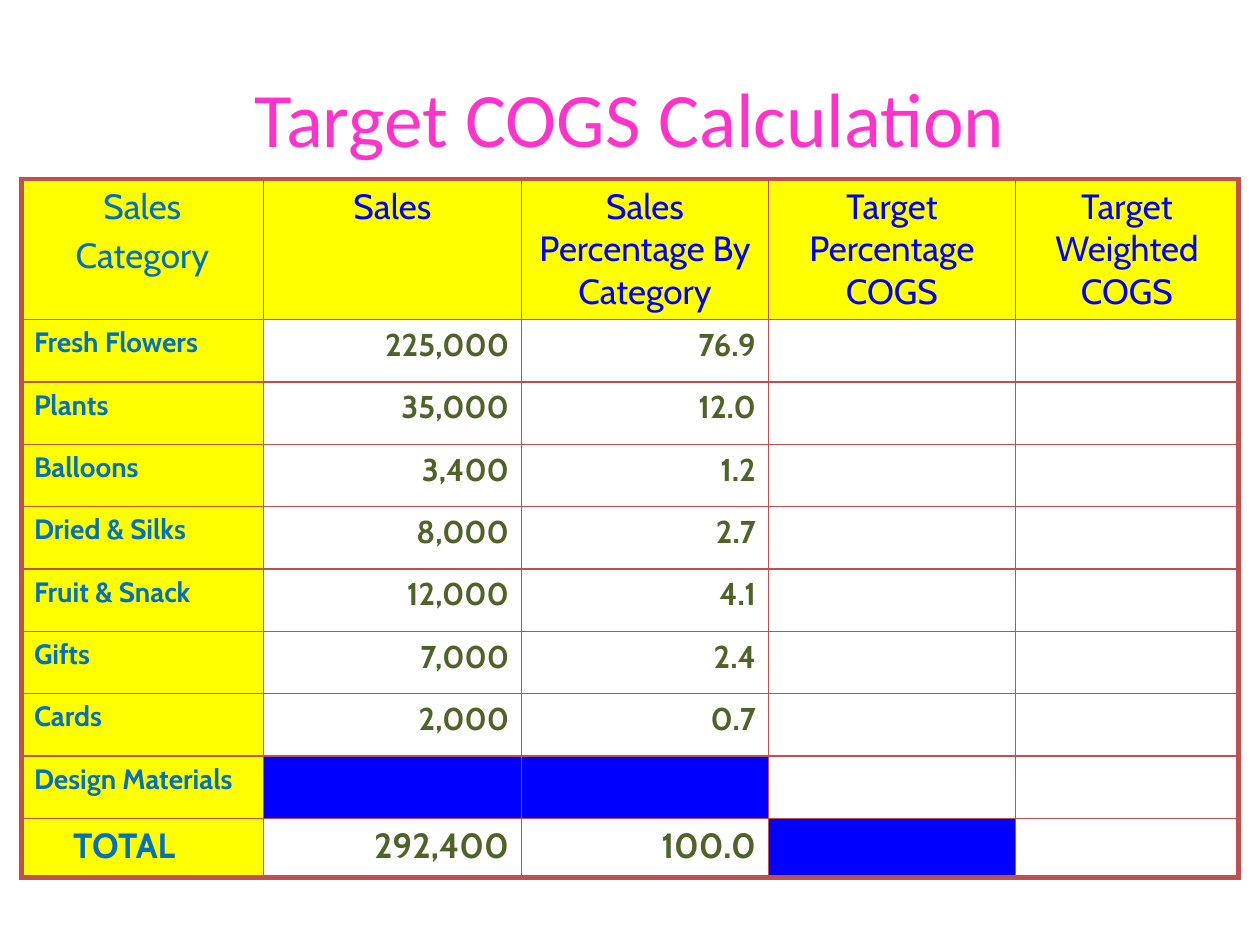
from dataclasses import dataclass

from lxml.etree import SubElement
from pptx import Presentation
from pptx.dml.color import RGBColor
from pptx.enum.dml import MSO_PATTERN
from pptx.enum.text import MSO_ANCHOR, PP_ALIGN
from pptx.oxml.ns import qn
from pptx.util import Inches, Pt

COLORS = {
    "title": "FF33CC",
    "label": "0070C0",
    "heading": "0000FF",
    "number": "4F6228",
    "label_fill": "FFFF00",
    "blocked": "0000FF",
    "border": "C0504D",
}
COLUMN_WIDTHS = [1.92, 2.05, 1.96, 1.96, 1.77]
HEADER_HEIGHT, BODY_HEIGHT, TOTAL_HEIGHT = 1.11, 0.495, 0.47
HEADINGS = [
    "Sales\nCategory",
    "Sales",
    "Sales Percentage By Category",
    "Target Percentage COGS",
    "Target Weighted COGS",
]


@dataclass
class SalesRow:
    category: str
    sales: str = ""
    percentage: str = ""
    blocked: tuple[int, ...] = ()


SALES_ROWS = [
    SalesRow("Fresh Flowers", "225,000", "76.9"),
    SalesRow("Plants", "35,000", "12.0"),
    SalesRow("Balloons", "3,400", "1.2"),
    SalesRow("Dried & Silks", "8,000", "2.7"),
    SalesRow("Fruit & Snack", "12,000", "4.1"),
    SalesRow("Gifts", "7,000", "2.4"),
    SalesRow("Cards", "2,000", "0.7"),
    SalesRow("Design Materials", blocked=(1, 2)),
    SalesRow("TOTAL", "292,400", "100.0", blocked=(3,)),
]


def rgb(name: str) -> RGBColor:
    return RGBColor.from_string(COLORS[name])


def write_text(text_frame, text: str, *, size: float, color: str, font: str = "Cabin",
               bold: bool = False, align=PP_ALIGN.LEFT) -> None:
    for index, line in enumerate(text.split("\n")):
        paragraph = text_frame.paragraphs[0] if index == 0 else text_frame.add_paragraph()
        paragraph.alignment = align
        paragraph.space_before = Pt(size * 0.2 if index else 0)
        run = paragraph.add_run()
        run.text = line
        run.font.name = font
        run.font.size = Pt(size)
        run.font.bold = bold
        run.font.color.rgb = rgb(color)


def fill_cell(cell, color: str) -> None:
    cell.fill.solid()
    cell.fill.fore_color.rgb = rgb(color)


def block_cell(cell) -> None:
    cell.fill.patterned()
    cell.fill.pattern = MSO_PATTERN.WIDE_UPWARD_DIAGONAL
    cell.fill.fore_color.rgb = rgb("blocked")
    cell.fill.back_color.rgb = rgb("blocked")


def set_borders(cell, outer_sides: dict[str, bool]) -> None:
    properties = cell._tc.get_or_add_tcPr()
    for index, (side, is_outer) in enumerate(outer_sides.items()):
        line = properties.makeelement(qn(f"a:{side}"), {"w": str(Pt(3 if is_outer else 1))})
        fill = SubElement(line, qn("a:solidFill"))
        SubElement(fill, qn("a:srgbClr"), val=COLORS["border"])
        properties.insert(index, line)


def add_title(slide) -> None:
    title = slide.shapes.title
    title.left, title.top = Inches(0.5), Inches(0.3)
    title.width, title.height = Inches(9), Inches(1.25)
    title.text_frame.vertical_anchor = MSO_ANCHOR.MIDDLE
    write_text(title.text_frame, "Target COGS Calculation", size=44, color="title",
               font="Calibri", align=PP_ALIGN.CENTER)


def add_sales_table(slide) -> None:
    body_count = len(SALES_ROWS) - 1
    heights = [HEADER_HEIGHT] + [BODY_HEIGHT] * body_count + [TOTAL_HEIGHT]
    table = slide.shapes.add_table(
        len(heights), len(COLUMN_WIDTHS), Inches(0.17), Inches(1.42),
        Inches(sum(COLUMN_WIDTHS)), Inches(sum(heights)),
    ).table
    table.horz_banding = False
    table.first_row = False
    for column, width in zip(table.columns, COLUMN_WIDTHS):
        column.width = Inches(width)
    for row, height in zip(table.rows, heights):
        row.height = Inches(height)

    last_row, last_column = len(heights) - 1, len(COLUMN_WIDTHS) - 1
    for row_index in range(len(heights)):
        for column_index in range(len(COLUMN_WIDTHS)):
            cell = table.cell(row_index, column_index)
            if row_index == 0 or column_index == 0:
                fill_cell(cell, "label_fill")
            elif column_index in SALES_ROWS[row_index - 1].blocked:
                block_cell(cell)
            else:
                cell.fill.background()
            set_borders(cell, {
                "lnL": column_index == 0,
                "lnR": column_index == last_column,
                "lnT": row_index == 0,
                "lnB": row_index == last_row,
            })

    for column_index, heading in enumerate(HEADINGS):
        write_text(table.cell(0, column_index).text_frame, heading, size=20,
                   color="heading" if column_index else "label", align=PP_ALIGN.CENTER)
    for row_index, sales_row in enumerate(SALES_ROWS, start=1):
        is_total = row_index == last_row
        write_text(table.cell(row_index, 0).text_frame, sales_row.category,
                   size=20 if is_total else 16, color="label", bold=True)
        for column_index, value in enumerate((sales_row.sales, sales_row.percentage), start=1):
            if value:
                write_text(table.cell(row_index, column_index).text_frame, value,
                           size=20 if is_total else 18, color="number", bold=True,
                           align=PP_ALIGN.RIGHT)
    table.cell(last_row, 0).margin_left = Inches(0.41)


def main() -> None:
    presentation = Presentation()
    presentation.slide_width, presentation.slide_height = Inches(10), Inches(7.5)
    slide = presentation.slides.add_slide(presentation.slide_layouts[5])
    add_title(slide)
    add_sales_table(slide)
    presentation.save("out.pptx")


if __name__ == "__main__":
    main()
